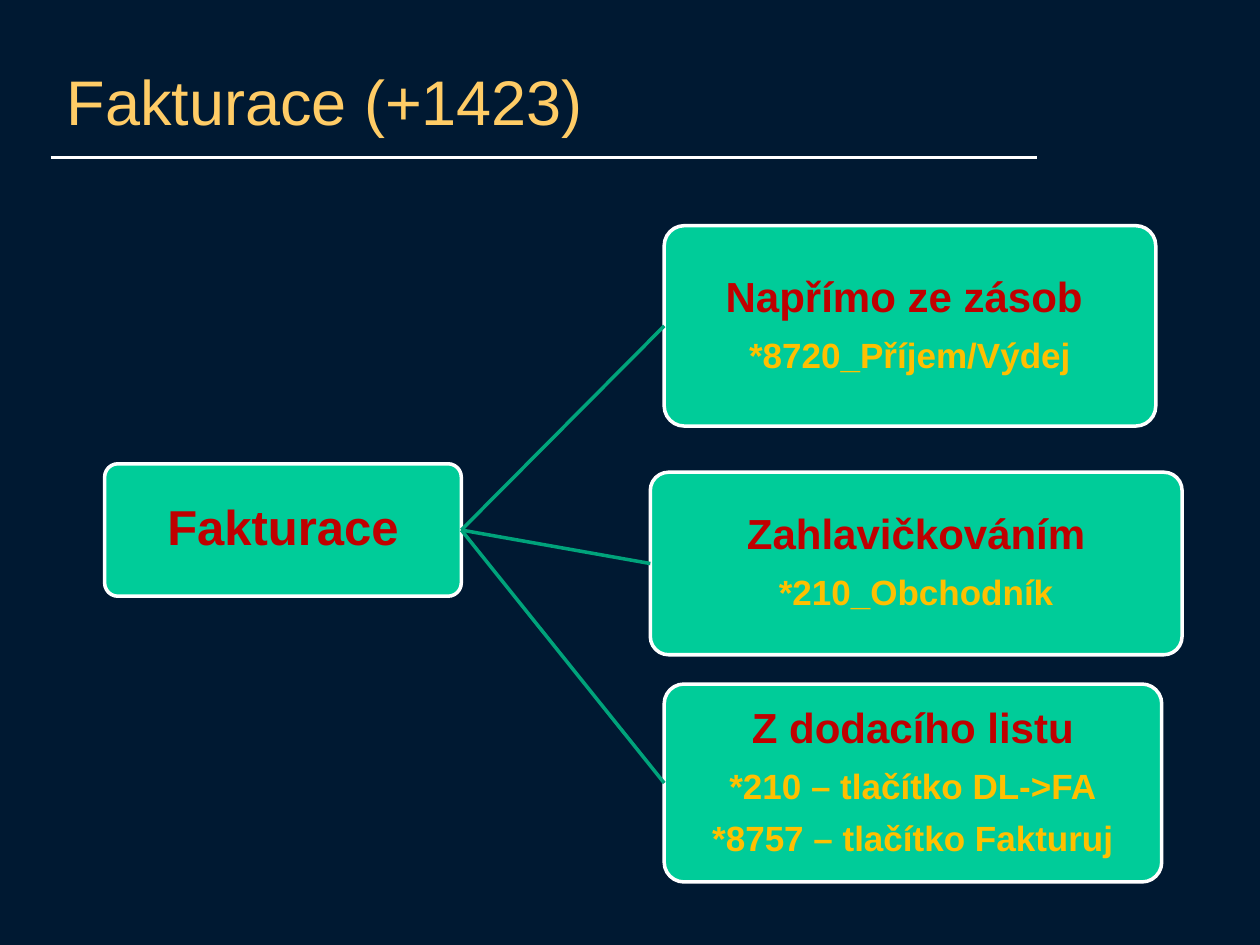
import pptx
import pptx.dml.color
import pptx.enum.shapes
import pptx.enum.text
import pptx.oxml.ns
import pptx.util
from lxml import etree

Cm = pptx.util.Cm
Pt = pptx.util.Pt
ALIGN = pptx.enum.text.PP_ALIGN
MIDDLE = pptx.enum.text.MSO_ANCHOR.MIDDLE

COLORS = {
    "background": "001932",
    "title": "FFCC66",
    "rule": "FFFFFF",
    "box": "00CC99",
    "link": "00A37B",
    "heading": "C00000",
    "detail": "FFC000",
}
TITLE_FONT = {"name": "Arial", "size": Pt(36), "bold": False}
ROOT = ((2.11, 9.35, 7.19, 2.67), "Fakturace", [])
BRANCHES = [
    ((13.39, 4.55, 9.91, 4.04), "Napřímo ze zásob ", ["*8720_Příjem/Výdej"]),
    ((13.11, 9.52, 10.72, 3.68), "Zahlavičkováním", ["*210_Obchodník"]),
    ((13.39, 13.79, 10.03, 3.99), "Z dodacího listu",
     ["*210 – tlačítko DL->FA", "*8757 – tlačítko Fakturuj"]),
]


def rgb(name):
    return pptx.dml.color.RGBColor.from_string(COLORS[name])


def apply(target, values):
    for name, value in values.items():
        setattr(target, name, value)


def add_line(page, start, end, color, width):
    line = page.shapes.add_connector(
        pptx.enum.shapes.MSO_CONNECTOR.STRAIGHT, *start, *end)
    line.line.color.rgb = rgb(color)
    line.line.width = Pt(width)
    etree.SubElement(line._element.spPr, pptx.oxml.ns.qn("a:effectLst"))
    return line


def add_header(page, left, top, width, height):
    title = page.shapes.title
    apply(title, {"left": Cm(left), "top": Cm(top),
                  "width": Cm(width), "height": Cm(height)})
    title.text_frame.text = "Fakturace (+1423)"
    title.text_frame.vertical_anchor = MIDDLE
    para = title.text_frame.paragraphs[0]
    para.alignment = ALIGN.LEFT
    apply(para.font, TITLE_FONT)
    para.font.color.rgb = rgb("title")
    rule_y = Cm(top + height + 0.21)
    add_line(page, (Cm(left - 0.07), rule_y),
             (Cm(left + width - 0.08), rule_y), "rule", 1.5)


def add_node(page, bounds, heading, details, heading_size):
    box = page.shapes.add_shape(
        pptx.enum.shapes.MSO_SHAPE.ROUNDED_RECTANGLE, *map(Cm, bounds))
    box.adjustments[0] = 0.1
    box.shadow.inherit = False
    box.fill.solid()
    box.fill.fore_color.rgb = rgb("box")
    box.line.color.rgb = rgb("rule")
    box.line.width = Pt(2)
    frame = box.text_frame
    apply(frame, {"word_wrap": True, "vertical_anchor": MIDDLE,
                  "margin_left": Cm(0.05), "margin_right": Cm(0.05),
                  "margin_top": Cm(0.05), "margin_bottom": Cm(0.05)})
    lines = [(heading, heading_size, "heading")]
    lines += [(detail, 20, "detail") for detail in details]
    for index, (text, size, color) in enumerate(lines):
        para = frame.add_paragraph() if index else frame.paragraphs[0]
        apply(para, {"alignment": ALIGN.CENTER, "line_spacing": 0.9,
                     "space_after": Pt(0.4 * size)})
        span = para.add_run()
        span.text = text
        apply(span.font, {"name": "Arial", "size": Pt(size), "bold": True})
        span.font.color.rgb = rgb(color)
    return box


def add_tree(page, root, branches):
    root_box = add_node(page, *root, 28)
    start = (root_box.left + root_box.width,
             root_box.top + root_box.height // 2)
    for branch in branches:
        box = add_node(page, *branch, 24)
        end = (box.left, box.top + box.height // 2)
        link = add_line(page, start, end, "link", 2)
        link.begin_connect(root_box, 3)
        link.end_connect(box, 1)


def main():
    deck = pptx.Presentation()
    deck.slide_width, deck.slide_height = Cm(25.4), Cm(19.05)
    page = deck.slides.add_slide(deck.slide_layouts[5])
    page.background.fill.solid()
    page.background.fill.fore_color.rgb = rgb("background")
    add_header(page, 1.09, 1.07, 19.89, 1.9)
    add_tree(page, ROOT, BRANCHES)
    deck.save("out.pptx")


if __name__ == "__main__":
    main()
